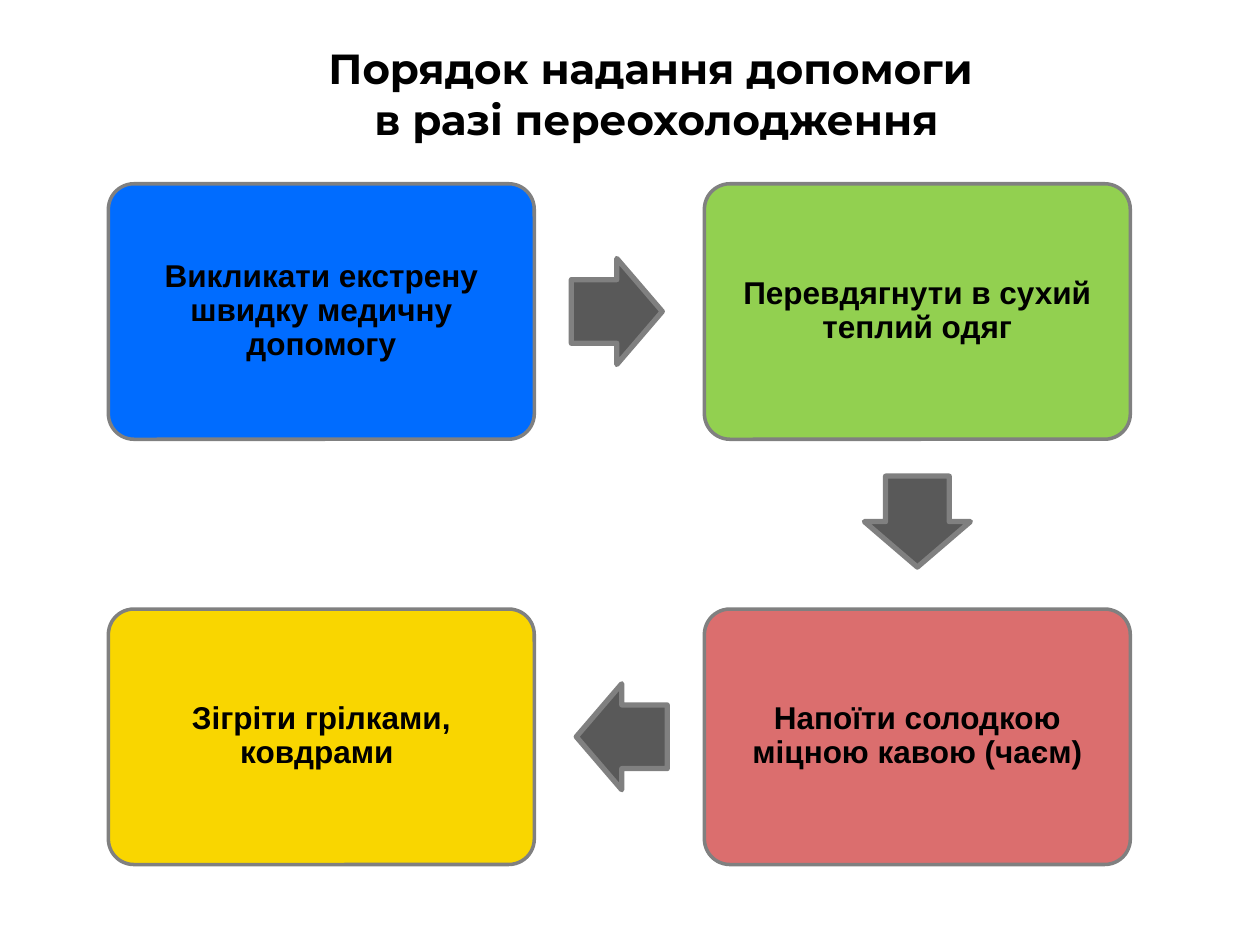
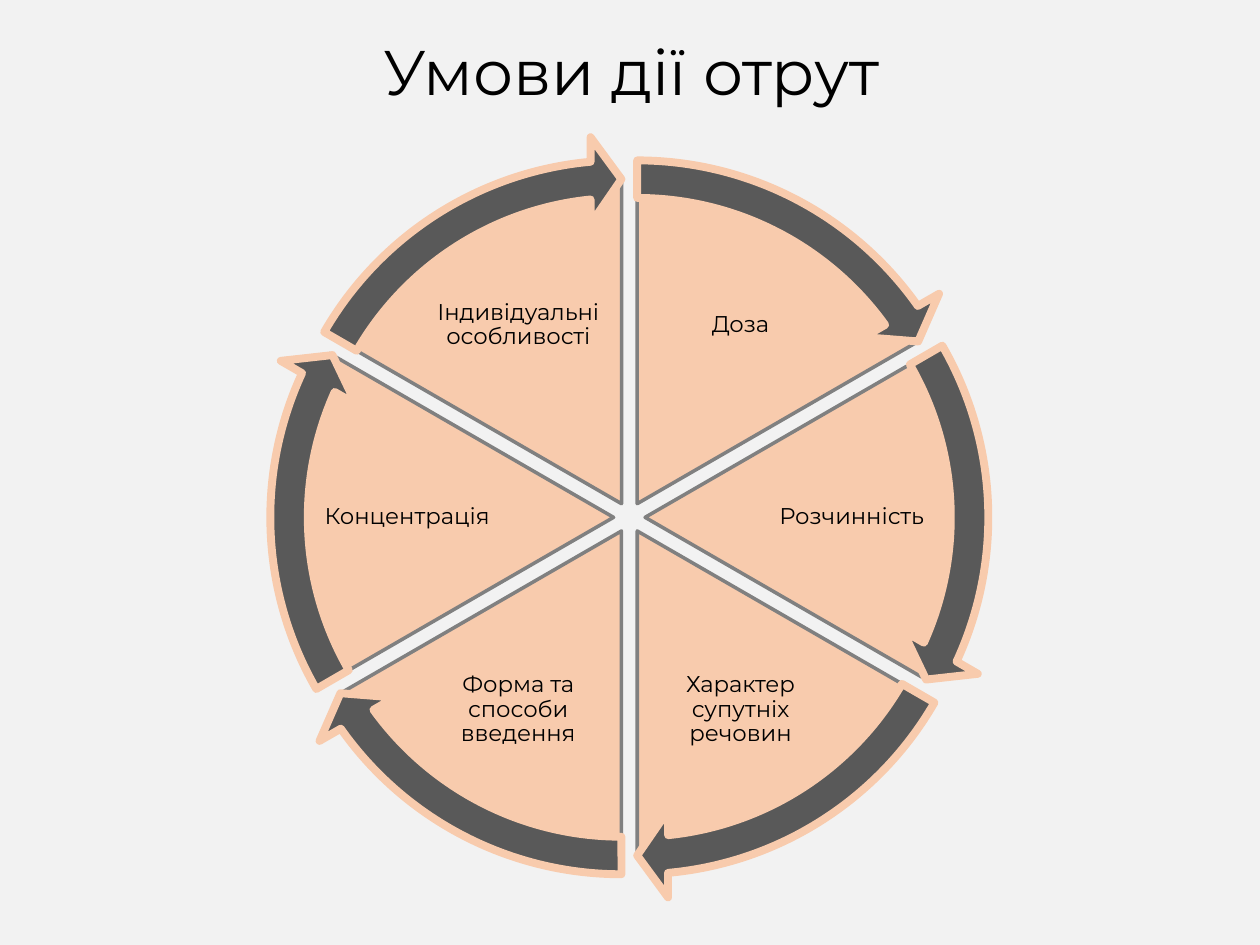
from math import cos, radians, sin

from lxml.etree import SubElement
from pptx import Presentation
from pptx.dml.color import RGBColor
from pptx.enum.shapes import MSO_SHAPE as Shape
from pptx.enum.text import MSO_ANCHOR as Anchor, MSO_AUTO_SIZE as AutoSize, PP_ALIGN as Align
from pptx.oxml.ns import qn
from pptx.util import Pt

COLORS = {
    "white": "FFFFFF", "mist": "F2F2F2", "text": "000000",
    "blue": "006CFF", "green": "92D050", "red": "C00000", "yellow": "F9D600",
    "peach": "F8CBAD", "arrow": "595959", "outline": "808080",
}
TITLE_FONT = {"name": "Montserrat", "bold": False}
CARD_FONT = {"name": "Arial", "size": Pt(18), "bold": True}
SECTOR_FONT = {"name": "Montserrat", "size": Pt(13), "bold": False}

# Steps clockwise from the top left: text, colour, opacity, column, row
STEPS = [
    ("Викликати екстрену швидку медичну допомогу", "blue", 100, 0, 0),
    ("Перевдягнути в сухий теплий одяг", "green", 100, 1, 0),
    ("Напоїти солодкою міцною кавою (чаєм)", "red", 57, 1, 1),
    ("Зігріти грілками, ковдрами ", "yellow", 100, 0, 1),
]
# Sectors clockwise from the top: label, width of the pie
CONDITIONS = [
    ("Доза", 374.4), ("Розчинність", 374.4), ("Характер супутніх речовин", 384),
    ("Форма та способи введення", 374.4), ("Концентрація", 374.4),
    ("Індивідуальні особливості", 384),
]


def color(name):
    return RGBColor.from_string(COLORS[name])


def set_all(target, values):
    for name, value in values.items():
        setattr(target, name, value)


def write(shape, lines, font, margin, align=Align.CENTER, spacing=0.9, **frame_values):
    """Put one paragraph per line into the shape."""
    frame = shape.text_frame
    sides = ("margin_left", "margin_top", "margin_right", "margin_bottom")
    set_all(frame, {"word_wrap": True, "vertical_anchor": Anchor.MIDDLE,
                    **dict.fromkeys(sides, Pt(margin)), **frame_values})
    for index, line in enumerate(lines):
        para = frame.add_paragraph() if index else frame.paragraphs[0]
        set_all(para, {"alignment": align, "line_spacing": spacing, "space_before": Pt(0)})
        span = para.add_run()
        span.text = line
        set_all(span.font, font)
        span.font.color.rgb = color("text")


def add_figure(page, kind, center, size, adjustments, fill, line, line_width, opacity=100):
    """Draw a preset shape around its centre."""
    (x, y), (width, height) = center, size
    figure = page.shapes.add_shape(
        kind, Pt(x - width / 2), Pt(y - height / 2), Pt(width), Pt(height))
    for index, value in enumerate(adjustments):
        figure.adjustments[index] = value
    figure.shadow.inherit = False
    figure.fill.solid()
    figure.fill.fore_color.rgb = color(fill)
    if opacity < 100:
        tint = figure.fill._xPr.find(qn("a:solidFill"))[0]
        SubElement(tint, qn("a:alpha"), val=str(opacity * 1000))
    figure.line.color.rgb = color(line)
    figure.line.width = Pt(line_width)
    return figure


def add_page(deck, background, title_lines, title_box, font, align):
    """Add a page with its background and title."""
    page = deck.slides.add_slide(deck.slide_layouts[5])
    page.background.fill.solid()
    page.background.fill.fore_color.rgb = color(background)
    title = page.shapes.title
    set_all(title, dict(zip(("left", "top", "width", "height"), map(Pt, title_box))))
    write(title, title_lines, {**TITLE_FONT, **font}, 7.2, align, 1.0,
          word_wrap=False, vertical_anchor=Anchor.TOP,
          auto_size=AutoSize.SHAPE_TO_FIT_TEXT, margin_top=Pt(3.6), margin_bottom=Pt(3.6))
    return page


def add_step_cycle(page, box):
    """Four cards in the corners of the box, with arrows from each to the next."""
    left, top, width, height = box
    card_width, card_height = 243.4, 146
    centers = []
    for text, fill, opacity, column, row in STEPS:
        center = (left + card_width / 2 + column * (width - card_width),
                  top + card_height / 2 + row * (height - card_height))
        card = add_figure(page, Shape.ROUNDED_RECTANGLE, center, (card_width, card_height),
                          [0.1], fill, "outline", 2, opacity)
        write(card, [text], CARD_FONT, 5)
        centers.append(center)

    # Arrows sit slightly before the middle of each gap
    setback = 1.4
    for index, (start, end) in enumerate(zip(centers, centers[1:])):
        angle = index * 90
        middle = ((start[0] + end[0]) / 2 - setback * cos(radians(angle)),
                  (start[1] + end[1]) / 2 - setback * sin(radians(angle)))
        arrow = add_figure(page, Shape.RIGHT_ARROW, middle, (52, 60.6), [0.6, 0.5],
                           "arrow", "outline", 3)
        arrow.rotation = angle


def add_sector_wheel(page, box):
    """Sectors pushed out from the middle of the box, each with a label and rim arrow."""
    left, top, width, height = box
    step = 360 / len(CONDITIONS)
    turn = 216  # a full circle in adjustment units
    unit = turn / 360

    def from_middle(distance, angle):
        return (left + width / 2 + distance * cos(radians(angle)),
                top + height / 2 + distance * sin(radians(angle)))

    # Sectors and labels
    rim_arrows = []
    for index, (label, pie_width) in enumerate(CONDITIONS):
        start = (270 + index * step) % 360
        bisector = start + step / 2
        center = from_middle(9, bisector)
        add_figure(page, Shape.PIE, center, (pie_width, 374.4),
                   [start * unit, (start + step) % 360 * unit], "peach", "outline", 2)
        x, y = from_middle(127, bisector)
        caption = page.shapes.add_textbox(Pt(x - 51), Pt(y - 37), Pt(102), Pt(74))
        write(caption, [label], SECTOR_FONT, 1.4)
        rim_arrows.append((center, start * unit))

    # Rim arrows lie above all sectors
    for center, start in rim_arrows:
        add_figure(page, Shape.CIRCULAR_ARROW, center, (420.5, 420.5),
                   [0.051, 3.275, (start + 32.725) % turn, start, 0.059],
                   "arrow", "peach", 4.5)


def main():
    deck = Presentation()
    deck.slide_width, deck.slide_height = Pt(720), Pt(540)

    first_aid = add_page(
        deck, "white", ["Порядок надання допомоги ", "в разі переохолодження"],
        (175, 20.9, 400.3, 65.5), {"size": Pt(24), "bold": True}, Align.CENTER)
    add_step_cycle(first_aid, (61.9, 105, 584, 389))

    poisons = add_page(
        deck, "mist", ["Умови дії отрут"],
        (211.7, 15.1, 321.8, 51.1), {"size": Pt(36)}, Align.LEFT)
    add_sector_wheel(poisons, (149.4, 85.4, 420.5, 420.5))

    deck.save("out.pptx")


if __name__ == "__main__":
    main()
